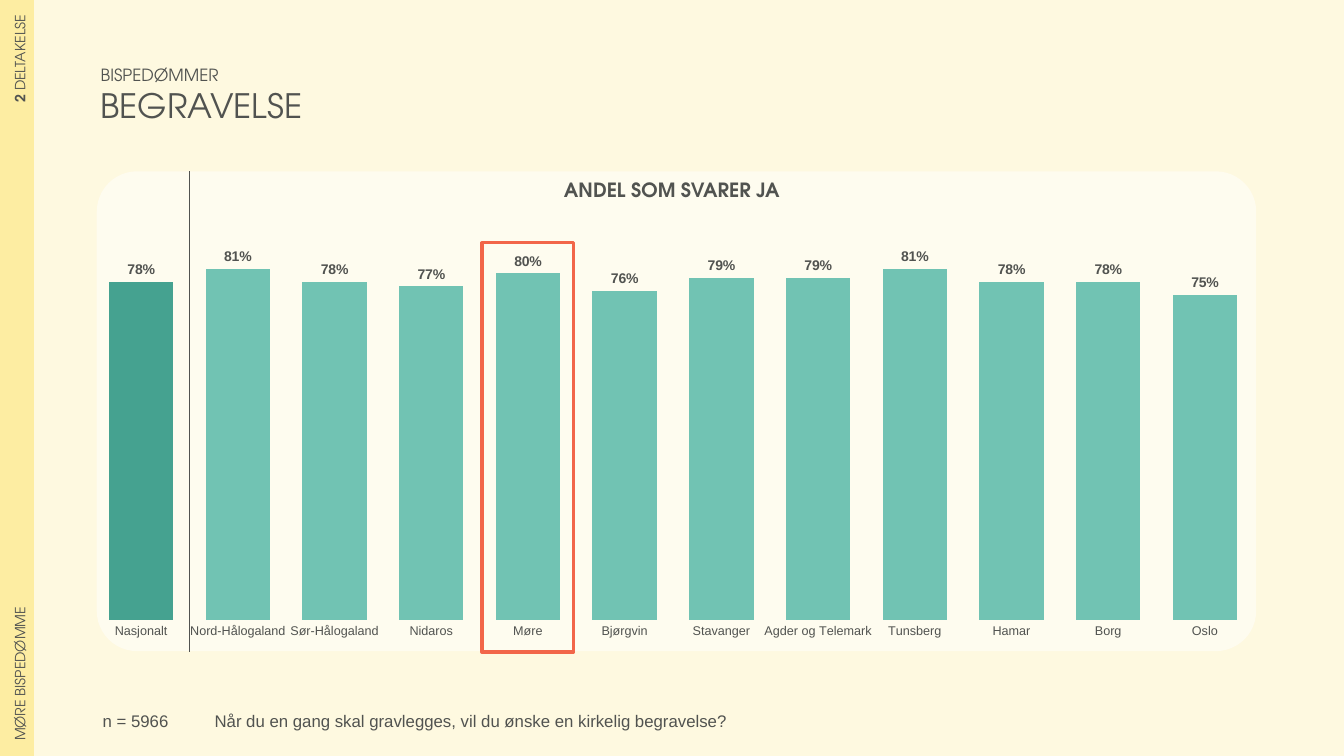
import dataclasses
import typing

import pptx
import pptx.chart.data
import pptx.dml.color
import pptx.enum.chart
import pptx.enum.shapes
import pptx.enum.text
import pptx.oxml
import pptx.oxml.ns
import pptx.util

Inches = pptx.util.Inches
Pt = pptx.util.Pt
qn = pptx.oxml.ns.qn
ALIGN = pptx.enum.text.PP_ALIGN
ANCHOR = pptx.enum.text.MSO_ANCHOR
SHAPE = pptx.enum.shapes.MSO_SHAPE


@dataclasses.dataclass(frozen=True)
class Theme:
    background: str = "FEF9E0"
    sidebar: str = "FDEDA2"
    text: str = "515350"
    panel: str = "FFFFFF"
    bar: str = "71C3B3"
    national_bar: str = "45A290"
    highlight: str = "F26649"
    heading_font: str = "TeX Gyre Adventor"
    body_font: str = "Arial"
    axis_size: float = 9
    small_size: float = 10
    body_size: float = 12
    chart_title_size: float = 14
    title_size: float = 24


class Box(typing.NamedTuple):
    left: float
    top: float
    width: float
    height: float

    def lengths(self) -> list:
        return [Inches(v) for v in self]


@dataclasses.dataclass(frozen=True)
class Run:
    text: str
    size: float
    font: str
    bold: bool = False


@dataclasses.dataclass(frozen=True)
class Label:
    box: Box
    lines: list
    align: ALIGN = ALIGN.LEFT
    anchor: ANCHOR = ANCHOR.TOP
    grow: bool = False


THEME = Theme()
SIDEBAR_WIDTH, SLIDE_HEIGHT = 0.34, 7.5
SIDEBAR_INSET = 0.15
PANEL = Box(0.96, 1.7, 11.5, 4.76)
CHART = Box(0.92, 1.7, 11.58, 4.76)
HIGHLIGHT = Box(4.78, 2.41, 0.91, 4.06)
DIVIDER_X, DIVIDER_TOP, DIVIDER_BOTTOM = 1.88, 1.7, 6.47
PLOT_AREA = {"x": 0, "y": 0.032, "w": 0.994, "h": 0.903}

SHARES = {
    "Nasjonalt": 0.78, "Nord-Hålogaland": 0.81, "Sør-Hålogaland": 0.78,
    "Nidaros": 0.77, "Møre": 0.80, "Bjørgvin": 0.76, "Stavanger": 0.79,
    "Agder og Telemark": 0.79, "Tunsberg": 0.81, "Hamar": 0.78,
    "Borg": 0.78, "Oslo": 0.75,
}

SIDEBAR = [
    ([Run("2", THEME.small_size, THEME.heading_font, True),
      Run(" DELTAKELSE", THEME.small_size, THEME.heading_font)], ALIGN.RIGHT),
    ([Run("MØRE BISPEDØMME", THEME.small_size, THEME.heading_font)], ALIGN.LEFT),
]

HEADING = Label(
    Box(0.9, 0.59, 10.55, 0.71),
    [[Run("BISPEDØMMER", THEME.body_size, THEME.heading_font)],
     [Run("BEGRAVELSE", THEME.title_size, THEME.heading_font)]],
    anchor=ANCHOR.MIDDLE, grow=True)
QUESTION = Label(
    Box(2.03, 7, 10.39, 0.27),
    [[Run("Når du en gang skal gravlegges, vil du ønske en kirkelig begravelse?",
          THEME.body_size, THEME.body_font)]])
SAMPLE = Label(Box(0.92, 7, 1.43, 0.27),
               [[Run("n = 5966", THEME.body_size, THEME.body_font)]])
CHART_TITLE = Label(
    Box(3.33, 1.72, 6.67, 0.34),
    [[Run("ANDEL SOM SVARER JA", THEME.chart_title_size, THEME.heading_font, True)]],
    align=ALIGN.CENTER, grow=True)


def rgb(color: str) -> pptx.dml.color.RGBColor:
    return pptx.dml.color.RGBColor.from_string(color)


def format_font(font, *, size: float, name: str, bold: bool = False) -> None:
    font.size, font.name, font.bold = Pt(size), name, bold
    font.color.rgb = rgb(THEME.text)


def write_text(tf, lines: list, *, align: ALIGN = ALIGN.LEFT) -> None:
    for i, runs in enumerate(lines):
        p = tf.add_paragraph() if i else tf.paragraphs[0]
        p.alignment = align
        for run in runs:
            r = p.add_run()
            r.text = run.text
            format_font(r.font, size=run.size, name=run.font, bold=run.bold)


def add_label(slide, label: Label) -> None:
    tf = slide.shapes.add_textbox(*label.box.lengths()).text_frame
    tf.word_wrap = True
    tf.vertical_anchor = label.anchor
    if label.grow:
        tf.auto_size = pptx.enum.text.MSO_AUTO_SIZE.SHAPE_TO_FIT_TEXT
    write_text(tf, label.lines, align=label.align)


def add_sidebar(slide) -> None:
    box = Box(0, 0, SIDEBAR_WIDTH, SLIDE_HEIGHT)
    table = slide.shapes.add_table(len(SIDEBAR), 1, *box.lengths()).table
    table.first_row = table.horz_banding = False
    # The "No Style, No Grid" table style has no borders
    style = table._tbl.tblPr.find(qn("a:tableStyleId"))
    style.text = "{2D5ABB26-0587-4C30-8999-92F81FD0307C}"
    for i, (runs, align) in enumerate(SIDEBAR):
        cell = table.cell(i, 0)
        cell.fill.solid()
        cell.fill.fore_color.rgb = rgb(THEME.sidebar)
        cell.vertical_anchor = ANCHOR.MIDDLE
        cell.margin_left = cell.margin_right = Inches(SIDEBAR_INSET)
        cell.margin_top = cell.margin_bottom = Inches(SIDEBAR_INSET)
        cell._tc.get_or_add_tcPr().set("vert", "vert270")
        write_text(cell.text_frame, [runs], align=align)


def add_panel(slide) -> None:
    sp = slide.shapes.add_shape(SHAPE.ROUNDED_RECTANGLE, *PANEL.lengths())
    sp.shadow.inherit = False
    sp.adjustments[0] = 0.084
    sp.fill.solid()
    sp.fill.fore_color.rgb = rgb(THEME.panel)
    color = sp._element.spPr.find(qn("a:solidFill"))[0]
    color.append(pptx.oxml.parse_xml(
        f'<a:alpha {pptx.oxml.ns.nsdecls("a")} val="50000"/>'))
    sp.line.fill.background()


def set_plot_area(chart) -> None:
    area = chart._chartSpace.chart.plotArea
    for old in area.findall(qn("c:layout")):
        area.remove(old)
    modes = "".join(f'<c:{k}Mode val="edge"/>' for k in "xy")
    sizes = "".join(f'<c:{k} val="{v}"/>' for k, v in PLOT_AREA.items())
    area.insert(0, pptx.oxml.parse_xml(
        f'<c:layout {pptx.oxml.ns.nsdecls("c")}><c:manualLayout>'
        f'<c:layoutTarget val="inner"/>{modes}{sizes}</c:manualLayout></c:layout>'))


def add_share_chart(slide) -> None:
    data = pptx.chart.data.CategoryChartData(number_format="0%")
    data.categories = list(SHARES)
    data.add_series("Series 1", list(SHARES.values()))
    chart = slide.shapes.add_chart(
        pptx.enum.chart.XL_CHART_TYPE.COLUMN_CLUSTERED, *CHART.lengths(), data).chart
    chart.has_legend = chart.has_title = False
    format_font(chart.font, size=THEME.small_size, name=THEME.heading_font)
    set_plot_area(chart)

    # Axes
    values, cats = chart.value_axis, chart.category_axis
    values.minimum_scale, values.maximum_scale = 0, 1
    values.has_major_gridlines = values.visible = False
    cats.major_tick_mark = pptx.enum.chart.XL_TICK_MARK.NONE
    cats.format.line.fill.background()
    format_font(cats.tick_labels.font, size=THEME.axis_size, name=THEME.body_font)

    # Bars, with the national figure in a darker colour
    plot = chart.plots[0]
    plot.gap_width = 50
    plot.vary_by_categories = False
    series = plot.series[0]
    for item, color in ((series, THEME.bar), (series.points[0], THEME.national_bar)):
        item.format.fill.solid()
        item.format.fill.fore_color.rgb = rgb(color)

    # Value labels
    labels = series.data_labels
    labels.show_value = True
    labels.number_format, labels.number_format_is_linked = "0%", False
    labels.position = pptx.enum.chart.XL_LABEL_POSITION.OUTSIDE_END
    format_font(labels.font, size=THEME.small_size, name=THEME.body_font, bold=True)


def add_divider(slide) -> None:
    line = slide.shapes.add_connector(
        pptx.enum.shapes.MSO_CONNECTOR.STRAIGHT, Inches(DIVIDER_X),
        Inches(DIVIDER_TOP), Inches(DIVIDER_X), Inches(DIVIDER_BOTTOM))
    line.line.color.rgb = rgb(THEME.text)
    line.line.width = Pt(0.5)
    line._element.spPr.append(pptx.oxml.parse_xml(
        f'<a:effectLst {pptx.oxml.ns.nsdecls("a")}/>'))


def add_highlight(slide) -> None:
    sp = slide.shapes.add_shape(SHAPE.RECTANGLE, *HIGHLIGHT.lengths())
    sp.shadow.inherit = False
    sp.fill.background()
    sp.line.color.rgb = rgb(THEME.highlight)
    sp.line.width = Pt(2.25)


def main() -> None:
    prs = pptx.Presentation()
    prs.slide_width, prs.slide_height = Inches(13.33), Inches(SLIDE_HEIGHT)
    slide = prs.slides.add_slide(prs.slide_layouts[6])
    slide.background.fill.solid()
    slide.background.fill.fore_color.rgb = rgb(THEME.background)

    add_sidebar(slide)
    for label in (HEADING, QUESTION, SAMPLE):
        add_label(slide, label)
    add_panel(slide)
    add_share_chart(slide)
    add_divider(slide)
    add_label(slide, CHART_TITLE)
    add_highlight(slide)
    prs.save("out.pptx")


if __name__ == "__main__":
    main()
